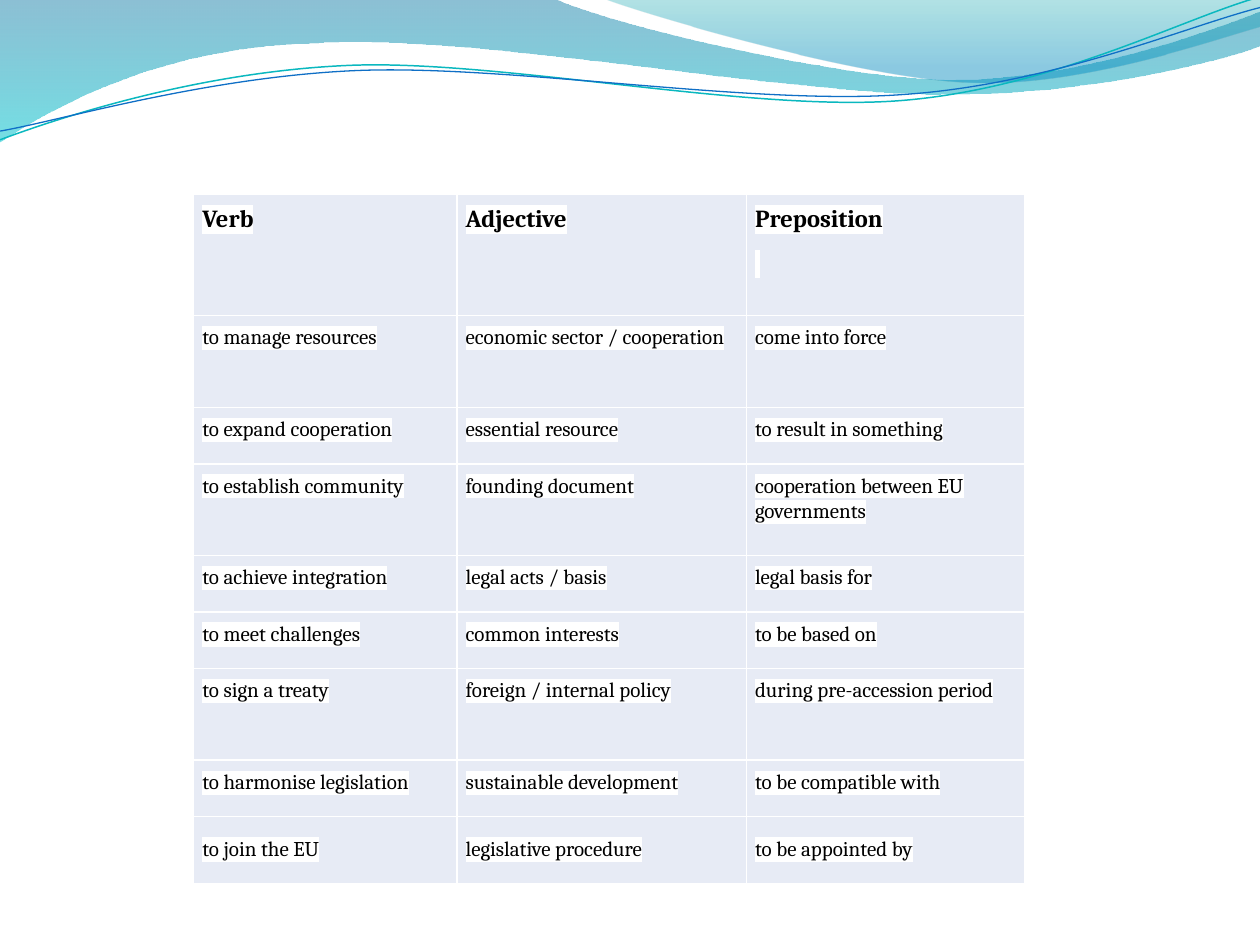
from dataclasses import dataclass
from typing import Any

from lxml import etree
from pptx import Presentation, util as u
from pptx.dml.color import RGBColor
from pptx.oxml import ns

BORDER_TAGS = ("a:lnL", "a:lnR", "a:lnT", "a:lnB")


def colour(hex_code):
    return RGBColor.from_string(hex_code)


def add_xml(parent, tag, **attributes):
    return etree.SubElement(parent, ns.qn(tag), attributes)


def add_text(paragraph, words, font="Cambria", size=12, bold=False, ink="000000",
             highlight="FFFFFF", spacing=1.07, after=8):
    paragraph.line_spacing = spacing
    paragraph.space_after = u.Pt(after)
    run = paragraph.add_run()
    run.text = words
    run.font.name = font
    run.font.size = u.Pt(size)
    run.font.bold = bold
    run.font.color.rgb = colour(ink)
    marker = etree.Element(ns.qn("a:highlight"))
    add_xml(marker, "a:srgbClr", val=highlight)
    run.font._element.find(ns.qn("a:solidFill")).addnext(marker)


def bend(shape, segments):
    straight = list(shape._element.spPr.iter(ns.qn("a:lnTo")))
    for line, segment in zip(straight, segments):
        if len(segment) == 2:
            continue
        curve = etree.Element(ns.qn("a:cubicBezTo"))
        for x, y in zip(segment[::2], segment[1::2]):
            add_xml(curve, "a:pt", x=str(u.Pt(x) - shape.left), y=str(u.Pt(y) - shape.top))
        line.getparent().replace(line, curve)


@dataclass
class VocabularySlide:
    slide: Any
    cell_fill: str = "E7EBF5"
    border: str = "FFFFFF"
    border_width: float = 1
    inset: float = 5

    def outline(self, segments, closed):
        start, *anchors = [(u.Pt(segment[-2]), u.Pt(segment[-1])) for segment in segments]
        builder = self.slide.shapes.build_freeform(*start)
        builder.add_line_segments(anchors, close=closed)
        shape = builder.convert_to_shape()
        bend(shape, segments[1:])
        shape.shadow.inherit = False
        return shape

    def wave(self, segments, stops):
        shape = self.outline(segments, True)
        shape.line.fill.background()
        shape.fill.gradient()
        shape.fill.gradient_angle = 270
        for stop, (position, hex_code, _) in zip(shape.fill.gradient_stops, stops):
            stop.position = position
            stop.color.rgb = colour(hex_code)
        tints = shape._element.spPr.iter(ns.qn("a:srgbClr"))
        for tint, (_, _, opacity) in zip(list(tints), stops):
            add_xml(tint, "a:alpha", val=str(opacity * 1000))

    def strand(self, segments, hex_code, width):
        shape = self.outline(segments, False)
        shape.fill.background()
        shape.line.color.rgb = colour(hex_code)
        shape.line.width = u.Pt(width)

    def style_cell(self, cell):
        cell.margin_left = cell.margin_right = u.Pt(self.inset)
        cell.margin_top = cell.margin_bottom = u.Pt(self.inset)
        properties = cell._tc.get_or_add_tcPr()
        for tag in BORDER_TAGS:
            edge = add_xml(properties, tag, w=str(u.Pt(self.border_width)))
            add_xml(add_xml(edge, "a:solidFill"), "a:srgbClr", val=self.border)
        cell.fill.solid()
        cell.fill.fore_color.rgb = colour(self.cell_fill)

    def table(self, left, top, widths, heights, rows):
        table = self.slide.shapes.add_table(
            len(rows), len(widths), u.Pt(left), u.Pt(top),
            u.Pt(sum(widths)), u.Pt(sum(heights))).table
        table.first_row = table.horz_banding = False
        for column, width in zip(table.columns, widths):
            column.width = u.Pt(width)
        for index, (height, phrases) in enumerate(zip(heights, rows)):
            table.rows[index].height = u.Pt(height)
            style = {"spacing": 1.5 if index == len(rows) - 1 else 1.07}
            if index == 0:
                style.update(size=14, bold=True)
            for cell, phrase in zip(table.rows[index].cells, phrases):
                self.style_cell(cell)
                first, *others = phrase.split("\n")
                add_text(cell.text_frame.paragraphs[0], first, **style)
                for line in others:
                    add_text(cell.text_frame.add_paragraph(), line, **style)


LARGE_WAVE = [
    (0, 0), (316.8, -0.7), (342.7, 12.2, 478.1, 45.4, 545.8, 45.4),
    (614.2, 45.4, 689.8, 18.7, 720, 6.5), (720.7, 25.9),
    (707.8, 31.7, 626.4, 54.7, 537.1, 54), (447.8, 54, 275, 20.2, 185, 24.5),
    (92.9, 25.9, 33.1, 59.8, -0.7, 81.4), (0, 0)]
SMALL_WAVE = [
    (344.9, -0.7), (366.5, 7.9, 491, 44.6, 553.7, 46.8),
    (616.3, 49.7, 691.9, 23, 720, 15.1), (720, 0), (344.9, -0.7)]
TEAL_STRAND = [
    (0, 79.9), (34.6, 67, 113.8, 41, 199.4, 37.4),
    (284.4, 33.8, 427, 64.1, 513.4, 57.6), (599.8, 51.1, 675.4, 10.8, 718.6, -1.4)]
BLUE_STRAND = [
    (0, 74.9), (33.8, 69.1, 118.1, 43.9, 203.8, 40.3),
    (290.2, 36.7, 429.8, 60.5, 516.2, 54), (601.9, 48.2, 677.5, 15.1, 720, 4.3)]

PHRASES = [
    ("Verb", "Adjective", "Preposition\n "),
    ("to manage resources", "economic sector / cooperation", "come into force"),
    ("to expand cooperation", "essential resource", "to result in something"),
    ("to establish community", "founding document", "cooperation between EU governments"),
    ("to achieve integration", "legal acts / basis", "legal basis for"),
    ("to meet challenges", "common interests", "to be based on"),
    ("to sign a treaty", "foreign / internal policy", "during pre-accession period"),
    ("to harmonise legislation", "sustainable development", "to be compatible with"),
    ("to join the EU", "legislative procedure", "to be appointed by"),
]
HEADER, TALL, SHORT, LAST = 69.1, 52.4, 32.3, 38.2


def main():
    deck = Presentation()
    deck.slide_width, deck.slide_height = u.Pt(720), u.Pt(540)
    page = VocabularySlide(deck.slides.add_slide(deck.slide_layouts[6]))
    page.wave(LARGE_WAVE, [(0, "0074A1", 45), (1, "00C6CF", 55)])
    page.wave(SMALL_WAVE, [(0, "00A1A9", 30), (0.8, "008BBF", 45)])
    page.strand(TEAL_STRAND, "0AB8BF", 0.85)
    page.strand(BLUE_STRAND, "0F6FC6", 0.75)
    page.table(110.6, 111.3, [150.5, 165.4, 159.1],
               [HEADER, TALL, SHORT, TALL, SHORT, SHORT, TALL, SHORT, LAST], PHRASES)
    deck.save("out.pptx")


if __name__ == "__main__":
    main()
